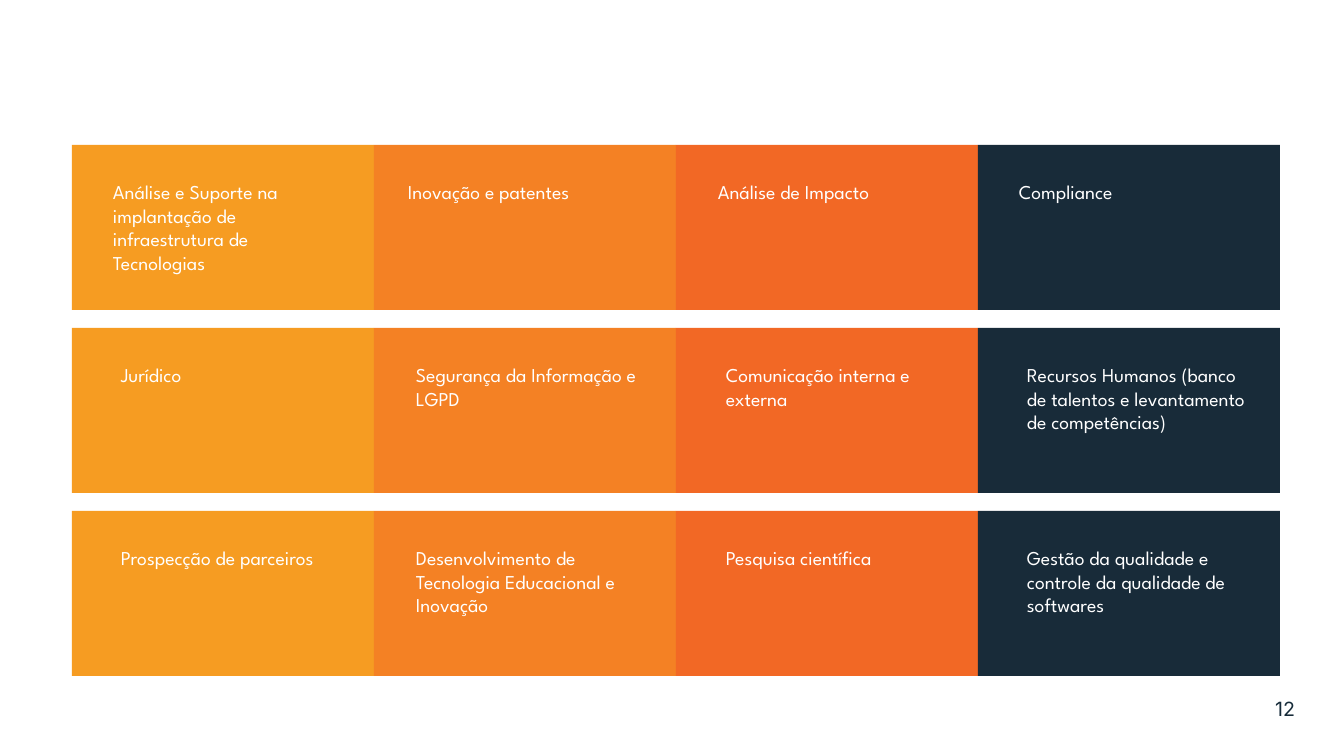
"""Build the slide with the grid of twelve areas of work."""
from pptx import Presentation
from pptx.dml.color import RGBColor
from pptx.enum.shapes import MSO_SHAPE
from pptx.enum.text import PP_ALIGN
from pptx.util import Pt

EMU_PER_PX = 914400 / 100.8
AMBER = RGBColor(0xF6, 0x9C, 0x22)
ORANGE = RGBColor(0xF4, 0x81, 0x24)
RED_ORANGE = RGBColor(0xF2, 0x68, 0x25)
NAVY = RGBColor(0x18, 0x2B, 0x39)
NUMBER_NAVY = RGBColor(0x16, 0x2B, 0x39)
WHITE = RGBColor(0xFF, 0xFF, 0xFF)

LEFT, TOP = 72, 145
CARD_W, CARD_H = 302, 165
ROW_STEP = 183
TEXT_TOP = 30
COLUMNS = [(AMBER, 31), (ORANGE, 24), (RED_ORANGE, 32), (NAVY, 31)]
ROW_INDENTS = [0, 8, 8]
AREAS = [
    ["Análise e Suporte na implantação de infraestrutura de Tecnologias",
     "Inovação e patentes",
     "Análise de Impacto",
     "Compliance"],
    ["Jurídico",
     "Segurança da Informação e LGPD",
     "Comunicação interna e externa",
     "Recursos Humanos (banco de talentos e levantamento de competências)"],
    ["Prospecção de parceiros",
     "Desenvolvimento de Tecnologia Educacional e Inovação",
     "Pesquisa científica",
     "Gestão da qualidade e controle da qualidade de softwares"],
]


def px(*values):
    """Turn pixel lengths into EMU."""
    return [round(v * EMU_PER_PX) for v in values]


def add_card(s, box, color):
    """Add a plain filled rectangle."""
    sp = s.shapes.add_shape(MSO_SHAPE.RECTANGLE, *px(*box))
    sp.shadow.inherit = False
    sp.fill.solid()
    sp.fill.fore_color.rgb = color
    sp.line.fill.background()


def add_text(s, box, text, font, color, align=PP_ALIGN.LEFT):
    """Add a wrapping text box with one run."""
    tf = s.shapes.add_textbox(*px(*box)).text_frame
    tf.word_wrap = True
    p = tf.paragraphs[0]
    p.alignment = align
    r = p.add_run()
    r.text = text
    r.font.name = font
    r.font.size = Pt(14)
    r.font.color.rgb = color


def main():
    """Build and save the slide."""
    prs = Presentation()
    prs.slide_width, prs.slide_height = px(1344, 756)
    s = prs.slides.add_slide(prs.slide_layouts[6])
    for row, (areas, indent) in enumerate(zip(AREAS, ROW_INDENTS)):
        y = TOP + row * ROW_STEP
        for col, (area, (color, inset)) in enumerate(zip(areas, COLUMNS)):
            x = LEFT + col * CARD_W
            add_card(s, (x, y, CARD_W, CARD_H), color)
            add_text(s, (x + inset + indent, y + TEXT_TOP, 241, 105),
                     area, "League Spartan", WHITE)
    add_text(s, (1220, 692, 85, 34), "12", "Inter", NUMBER_NAVY, PP_ALIGN.RIGHT)
    prs.save("out.pptx")


if __name__ == "__main__":
    main()
